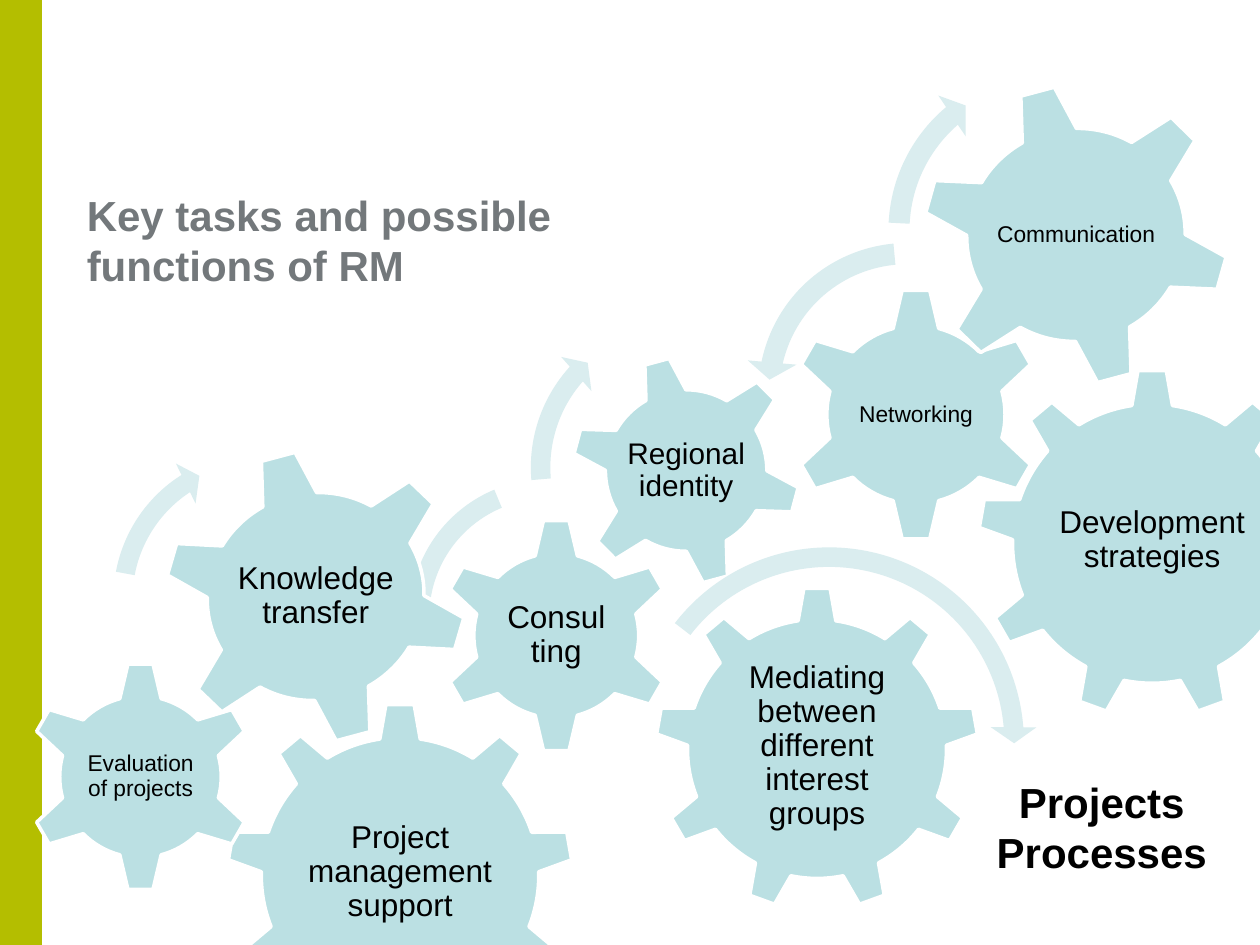
from pptx import Presentation
from pptx.dml.color import RGBColor
from pptx.enum.shapes import MSO_SHAPE as Shape
from pptx.enum.text import MSO_ANCHOR as Anchor, PP_ALIGN as Align
from pptx.util import Pt

COLORS = {"band": "B4BE00", "title": "73787B", "gear": "BBE0E3",
          "arrow": "DAEDEF", "edge": "FFFFFF", "text": "000000"}

# kind: shape, rotation, text area as left, top, width, height shares of the gear
GEAR_KINDS = {
    "large": (Shape.GEAR_9, 0, (0.2, 0.234, 0.6, 0.514)),
    "small": (Shape.GEAR_6, 0, (0.25, 0.25, 0.5, 0.5)),
    "tilted": (Shape.GEAR_6, 345, (0.22, 0.22, 0.56, 0.56)),
}
ARROW_KINDS = {
    "wide": (Shape.CIRCULAR_ARROW, (0.047, 2.99, 25.182, 158.568, 0.055)),
    "back": (Shape.LEFT_CIRCULAR_ARROW, (0.065, 4.3, 104.891, 148.378, 0.075)),
    "short": (Shape.CIRCULAR_ARROW, (0.06, 3.941, 133.138, 105.082, 0.07)),
}

# gears: kind, wording, left, top, width, height, text size, inset
# arrows: kind, left, top, size, rotation
CLUSTERS = [
    {"gears": [
        ("large", "Mediating between different interest groups",
         374.4, 335.5, 185, 185, 18, 2.2),
        ("small", "Consulting", 250.6, 295.9, 134.6, 134.6, 18, 3.6),
        ("tilted", "Regional identity", 326.2, 203, 131.8, 131.8, 17, 1.4)],
     "arrows": [
        ("wide", 355, 305.3, 237.6, 313.4),
        ("back", 226.8, 266.4, 172.1, 0),
        ("short", 295.9, 174.2, 185.8, 0)]},
    {"gears": [
        ("large", "Project management support", 129.6, 401.8, 198, 197.3, 18, 2.2),
        ("small", "Evaluation of projects", 14.4, 378, 131.8, 131.8, 13, 1.4),
        ("tilted", "Knowledge transfer", 92.9, 256.3, 175, 169.2, 18, 2.2)],
     "arrows": [("short", 57.6, 251.3, 181.4, 15.4)]},
    {"gears": [
        ("large", "Development strategies", 558.7, 211, 199.4, 199.4, 18, 2.2),
        ("small", "Networking", 450.7, 164.2, 145.4, 145.4, 13, 1.4),
        ("tilted", "Communication", 526.3, 47.5, 177.1, 173.5, 13, 1.4)],
     "arrows": [
        ("back", 425.5, 131, 185.8, 17.4),
        ("short", 499.7, 31.7, 200.2, 7.7)]},
]
TITLE = "Key tasks and possible\vfunctions of RM"
RESULT = "Projects\vProcesses"


def color(name):
    return RGBColor.from_string(COLORS[name])


def add_figure(shapes, kind, area, fill, edge=None, rotation=0):
    figure = shapes.add_shape(kind, *map(Pt, area))
    figure.shadow.inherit = False
    figure.rotation = rotation
    figure.fill.solid()
    figure.fill.fore_color.rgb = color(fill)
    if edge:
        figure.line.color.rgb = color(edge)
        figure.line.width = Pt(2)
    else:
        figure.line.fill.background()
    return figure


def add_text(shapes, text, area, size, ink="text", bold=False,
             align=Align.CENTER, anchor=Anchor.MIDDLE, inset=None, spacing=None):
    box = shapes.add_textbox(*map(Pt, area))
    frame = box.text_frame
    frame.word_wrap = True
    frame.vertical_anchor = anchor
    if inset is not None:
        frame.margin_left = frame.margin_right = Pt(inset)
        frame.margin_top = frame.margin_bottom = Pt(inset)
    para = frame.paragraphs[0]
    para.text = text
    para.alignment = align
    if spacing:
        para.line_spacing = spacing
    for span in para.runs:
        span.font.name = "Arial"
        span.font.size = Pt(size)
        span.font.bold = bold
        span.font.color.rgb = color(ink)


def add_gear(shapes, kind, text, left, top, width, height, size, inset):
    shape, rotation, (dx, dy, across, down) = GEAR_KINDS[kind]
    add_figure(shapes, shape, (left, top, width, height), "gear", "edge", rotation)
    area = (left + dx * width, top + dy * height, across * width, down * height)
    add_text(shapes, text, area, size, inset=inset, spacing=0.9)


def add_arrow(shapes, kind, left, top, size, rotation):
    shape, adjustments = ARROW_KINDS[kind]
    arrow = add_figure(shapes, shape, (left, top, size, size), "arrow",
                       rotation=rotation)
    for index, value in enumerate(adjustments):
        arrow.adjustments[index] = value


def main():
    deck = Presentation()
    deck.slide_width, deck.slide_height = Pt(720), Pt(540)
    page = deck.slides.add_slide(deck.slide_layouts[6])
    add_figure(page.shapes, Shape.RECTANGLE, (0, 0, 24, 540), "band")
    add_text(page.shapes, TITLE, (42.5, 100, 368.6, 74.2), 24, "title", True,
             Align.LEFT)
    for cluster in CLUSTERS:
        group = page.shapes.add_group_shape()
        for gear in cluster["gears"]:
            add_gear(group.shapes, *gear)
        for arrow in cluster["arrows"]:
            add_arrow(group.shapes, *arrow)
    add_text(page.shapes, RESULT, (558.7, 440, 141.8, 65.5), 24, bold=True,
             anchor=Anchor.TOP)
    deck.save("out.pptx")


if __name__ == "__main__":
    main()
